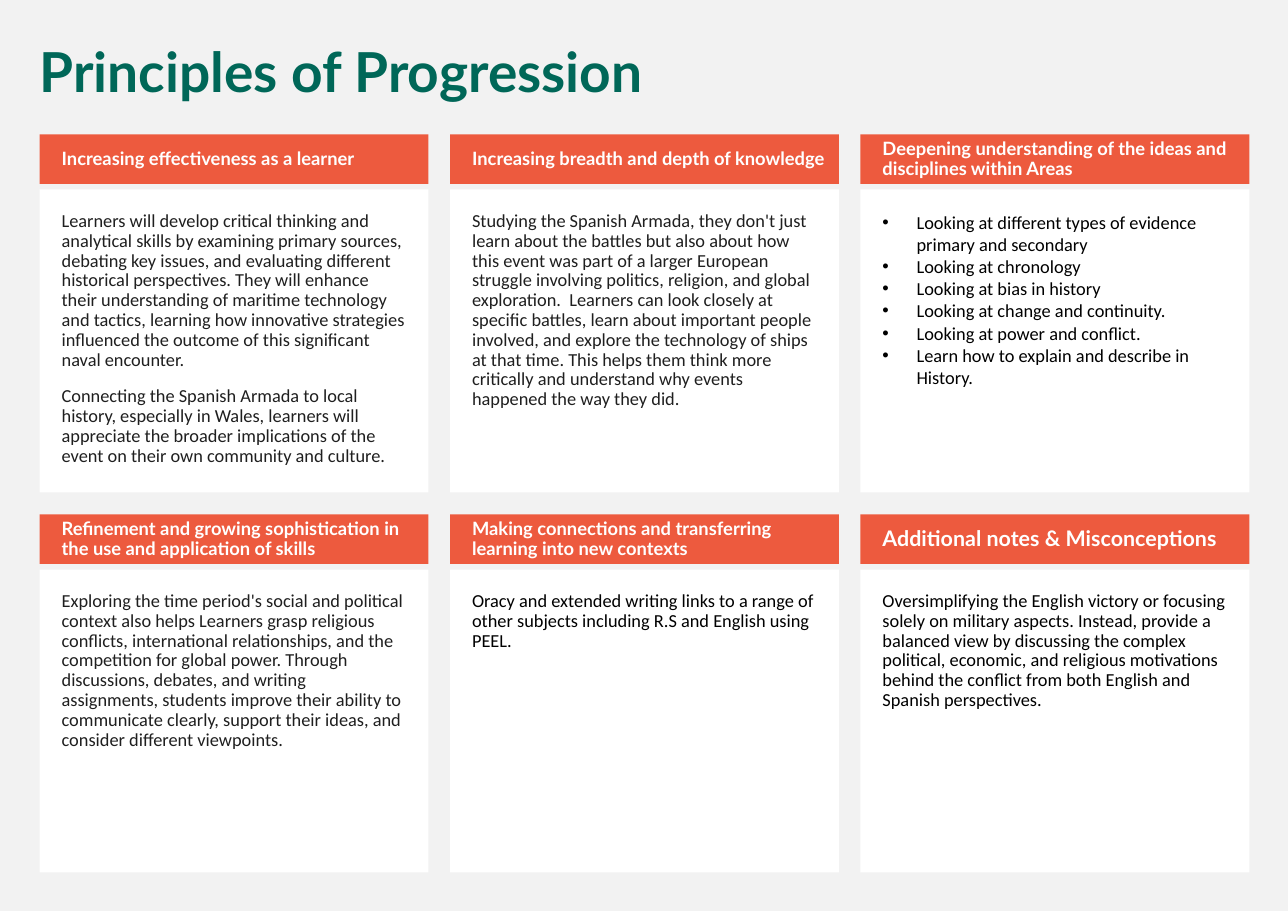
"""Build the Principles of Progression slide: six titled cards on a grid."""
import dataclasses

import lxml.etree
import pptx
import pptx.dml.color
import pptx.enum.shapes
import pptx.enum.text
import pptx.oxml.ns
import pptx.shapes.base
import pptx.slide
import pptx.text.text
import pptx.util


@dataclasses.dataclass(frozen=True)
class Theme:
    """Colours, fonts and type sizes in points."""
    background: str = "F2F2F2"
    card: str = "FFFFFF"
    header: str = "ED5A3E"
    header_text: str = "FFFFFF"
    title: str = "006758"
    dark: str = "1F1F1F"
    black: str = "000000"
    heading_font: str = "Lato"
    body_font: str = "Calibri"
    title_size: float = 36
    text_size: float = 12
    large_size: float = 14
    space_before: float = 11
    line_spacing: float = 0.9


@dataclasses.dataclass(frozen=True)
class Grid:
    """Card grid in inches."""
    slide_width: float = 11.69
    slide_height: float = 8.27
    left: float = 0.36
    right: float = 11.34
    top: float = 1.22
    columns: int = 3
    card_width: float = 3.53
    header_height: float = 0.45
    body_offset: float = 0.5
    body_height: float = 2.75
    row_pitch: float = 3.45

    def column_left(self, column: int) -> float:
        """Return the left edge of a column."""
        return self.left + column * (self.right - self.left - self.card_width) / (self.columns - 1)

    def row_top(self, row: int) -> float:
        """Return the top edge of a row."""
        return self.top + row * self.row_pitch


THEME = Theme()
GRID = Grid()


@dataclasses.dataclass(frozen=True)
class Card:
    """A heading with the paragraphs below it."""
    heading: str
    paragraphs: tuple[str, ...]
    color: str = THEME.black
    bulleted: bool = False
    heading_size: float = THEME.text_size


CARDS = (
    Card("Increasing effectiveness as a learner", (
        "Learners will develop critical thinking and analytical skills by examining primary sources, "
        "debating key issues, and evaluating different historical perspectives. They will enhance their "
        "understanding of maritime technology and tactics, learning how innovative strategies influenced "
        "the outcome of this significant naval encounter.",
        "Connecting the Spanish Armada to local history, especially in Wales, learners will appreciate the "
        "broader implications of the event on their own community and culture.",
    ), THEME.dark),
    Card("Increasing breadth and depth of knowledge", (
        "Studying the Spanish Armada, they don't just learn about the battles but also about how this event "
        "was part of a larger European struggle involving politics, religion, and global exploration.  "
        "Learners can look closely at specific battles, learn about important people involved, and explore "
        "the technology of ships at that time. This helps them think more critically and understand why "
        "events happened the way they did.",
    ), THEME.dark),
    Card("Deepening understanding of the ideas and disciplines within Areas", (
        "Looking at different types of evidence primary and secondary",
        "Looking at chronology",
        "Looking at bias in history",
        "Looking at change and continuity.",
        "Looking at power and conflict.",
        "Learn how to explain and describe in History.",
    ), bulleted=True),
    Card("Refinement and growing sophistication in the use and application of skills", (
        "Exploring the time period's social and political context also helps Learners grasp religious "
        "conflicts, international relationships, and the competition for global power. Through discussions, "
        "debates, and writing assignments, students improve their ability to communicate clearly, support "
        "their ideas, and consider different viewpoints.",
    ), THEME.dark),
    Card("Making connections and transferring learning into new contexts", (
        "Oracy and extended writing links to a range of other subjects including R.S and English using PEEL.",
    )),
    Card("Additional notes & Misconceptions", (
        "Oversimplifying the English victory or focusing solely on military aspects. Instead, provide a "
        "balanced view by discussing the complex political, economic, and religious motivations behind the "
        "conflict from both English and Spanish perspectives.",
    ), heading_size=THEME.large_size),
)


def rgb(color: str) -> pptx.dml.color.RGBColor:
    """Return a colour object for a hex value."""
    return pptx.dml.color.RGBColor.from_string(color)


def add_bullet(paragraph: pptx.text.text._Paragraph) -> None:
    """Give a paragraph a round bullet and a hanging indent."""
    properties = paragraph._p.get_or_add_pPr()
    indent = pptx.util.Inches(0.31)
    properties.set("marL", str(indent))
    properties.set("indent", str(-indent))
    font = lxml.etree.SubElement(properties, pptx.oxml.ns.qn("a:buFont"))
    font.set("typeface", "Arial")
    bullet = lxml.etree.SubElement(properties, pptx.oxml.ns.qn("a:buChar"))
    bullet.set("char", "•")


def write_text(shape: pptx.shapes.base.BaseShape, paragraphs: tuple[str, ...], font_name: str,
               size: float, color: str, bold: bool = False, bulleted: bool = False,
               anchor: pptx.enum.text.MSO_ANCHOR = pptx.enum.text.MSO_ANCHOR.TOP,
               insets: tuple[float, float, float, float] = (0.1, 0.05, 0.1, 0.05)) -> None:
    """Fill a shape with left-aligned paragraphs in one style."""
    frame = shape.text_frame
    frame.text = "\n".join(paragraphs)
    frame.word_wrap = True
    frame.auto_size = pptx.enum.text.MSO_AUTO_SIZE.NONE
    frame.vertical_anchor = anchor
    frame.margin_left, frame.margin_top, frame.margin_right, frame.margin_bottom = map(pptx.util.Inches, insets)
    for paragraph in frame.paragraphs:
        paragraph.alignment = pptx.enum.text.PP_ALIGN.LEFT
        if bulleted:
            add_bullet(paragraph)
        else:
            paragraph.line_spacing = THEME.line_spacing
            paragraph.space_before = pptx.util.Pt(THEME.space_before)
        for run in paragraph.runs:
            run.font.name = font_name
            run.font.size = pptx.util.Pt(size)
            run.font.bold = bold
            run.font.color.rgb = rgb(color)


def add_panel(slide: pptx.slide.Slide, left: float, top: float, height: float,
              color: str) -> pptx.shapes.base.BaseShape:
    """Add a plain rectangle one card wide."""
    shape = slide.shapes.add_shape(
        pptx.enum.shapes.MSO_SHAPE.RECTANGLE,
        *map(pptx.util.Inches, (left, top, GRID.card_width, height)))
    shape.shadow.inherit = False
    shape.fill.solid()
    shape.fill.fore_color.rgb = rgb(color)
    shape.line.fill.background()
    return shape


def add_card(slide: pptx.slide.Slide, card: Card, row: int, column: int) -> None:
    """Draw a card's body and header in its grid cell."""
    left, top = GRID.column_left(column), GRID.row_top(row)
    body = add_panel(slide, left, top + GRID.body_offset, GRID.body_height, THEME.card)
    write_text(body, card.paragraphs, THEME.body_font, THEME.text_size, card.color,
               bulleted=card.bulleted, insets=(0.2, 0.2, 0.2, 0.2))
    header = add_panel(slide, left, top, GRID.header_height, THEME.header)
    write_text(header, (card.heading,), THEME.heading_font, card.heading_size, THEME.header_text, bold=True,
               anchor=pptx.enum.text.MSO_ANCHOR.MIDDLE, insets=(0.2, 0.05, 0.1, 0.05))


def add_title(slide: pptx.slide.Slide) -> None:
    """Place and format the slide title."""
    title = slide.shapes.title
    title.left, title.top, title.width, title.height = map(pptx.util.Inches, (0.26, 0.36, 11.08, 0.65))
    write_text(title, ("Principles of Progression",), THEME.heading_font, THEME.title_size, THEME.title, bold=True)


def main() -> None:
    """Build and save the presentation."""
    presentation = pptx.Presentation()
    presentation.slide_width = pptx.util.Inches(GRID.slide_width)
    presentation.slide_height = pptx.util.Inches(GRID.slide_height)
    slide = presentation.slides.add_slide(presentation.slide_layouts.get_by_name("Title Only"))
    slide.background.fill.solid()
    slide.background.fill.fore_color.rgb = rgb(THEME.background)
    add_title(slide)
    for index, card in enumerate(CARDS):
        add_card(slide, card, *divmod(index, GRID.columns))
    presentation.save("out.pptx")


if __name__ == "__main__":
    main()
